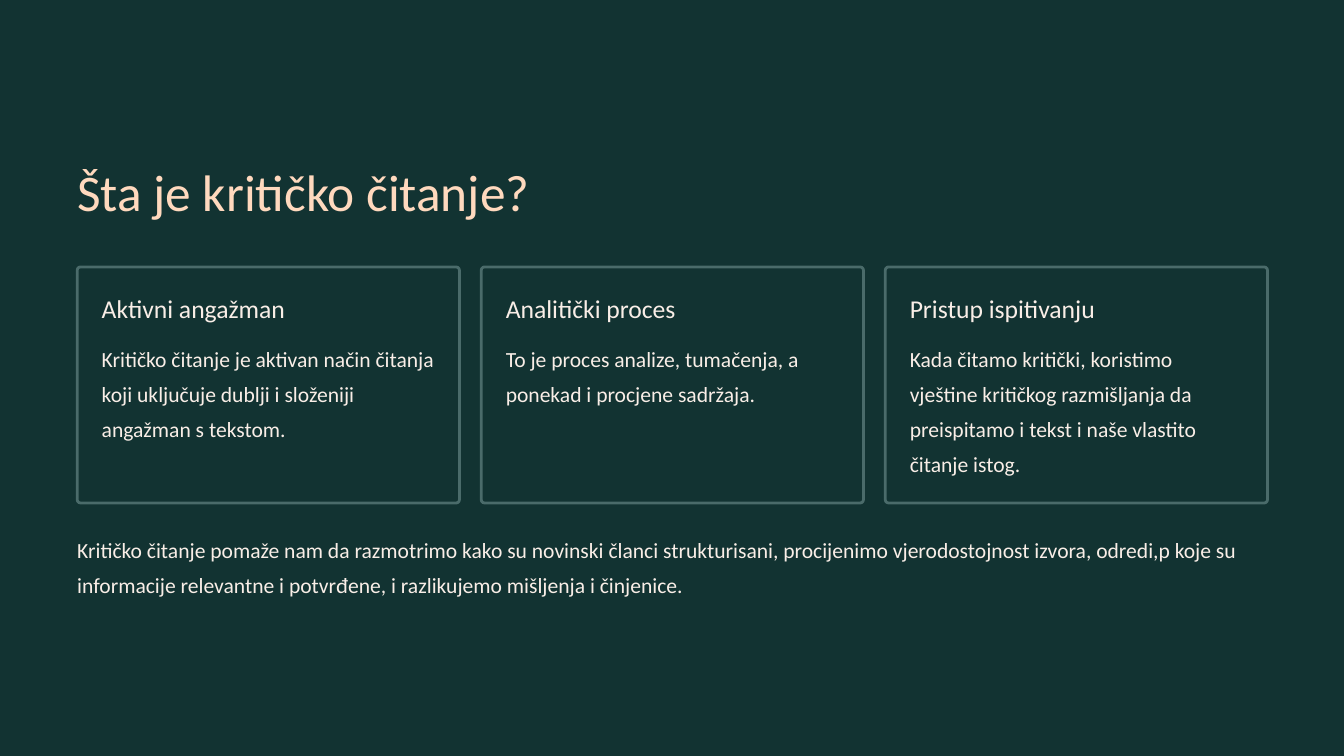
from pptx import Presentation
from pptx.dml.color import RGBColor
from pptx.enum.shapes import MSO_SHAPE as Shape
from pptx.enum.text import MSO_ANCHOR as Anchor, MSO_AUTO_SIZE as Fit, PP_ALIGN as Align
from pptx.util import Pt

GREEN = RGBColor(0x12, 0x33, 0x32)
EDGE = RGBColor(0x4A, 0x6B, 0x6A)
PEACH = RGBColor(0xFF, 0xD9, 0xBE)
CREAM = RGBColor(0xF9, 0xEE, 0xE7)

LEFT, WIDTH, GAP = 66.2, 1020.2, 18.7
CARDS = [
    ("Aktivni angažman",
     "Kritičko čitanje je aktivan način čitanja koji uključuje dublji i složeniji angažman s tekstom."),
    ("Analitički proces",
     "To je proces analize, tumačenja, a ponekad i procjene sadržaja."),
    ("Pristup ispitivanju",
     "Kada čitamo kritički, koristimo vještine kritičkog razmišljanja da preispitamo "
     "i tekst i naše vlastito čitanje istog."),
]
CLOSING = ("Kritičko čitanje pomaže nam da razmotrimo kako su novinski članci strukturisani, "
           "procijenimo vjerodostojnost izvora, odredi,p koje su informacije relevantne i "
           "potvrđene, i razlikujemo mišljenja i činjenice.")


def write(shape, text, size, lead, color=CREAM):
    """Fill a shape with one left-aligned paragraph and no insets."""
    frame = shape.text_frame
    frame.margin_left = frame.margin_right = frame.margin_top = frame.margin_bottom = 0
    frame.word_wrap = True
    frame.auto_size = Fit.NONE
    frame.vertical_anchor = Anchor.TOP
    frame.text = text
    para = frame.paragraphs[0]
    para.alignment = Align.LEFT
    para.line_spacing = Pt(lead)
    para.font.size = Pt(size)
    para.font.name = "Calibri"
    para.font.color.rgb = color


def add_text(slide, box, text, size, lead):
    """Add a text box at the given left, top, width and height."""
    write(slide.shapes.add_textbox(*map(Pt, box)), text, size, lead)


def add_title(slide, box, text):
    """Place the slide title in its box."""
    title = slide.shapes.title
    title.left, title.top, title.width, title.height = map(Pt, box)
    write(title, text, 44, 55, PEACH)


def add_card(slide, box, head, body):
    """Draw an outlined card with a heading and body text."""
    left, top, width, height = box
    card = slide.shapes.add_shape(Shape.ROUNDED_RECTANGLE, *map(Pt, box))
    card.adjustments[0] = 0.014
    card.shadow.inherit = False
    card.fill.solid()
    card.fill.fore_color.rgb = GREEN
    card.line.color.rgb = EDGE
    card.line.width = Pt(2.4)
    pad = 21
    inner = width - 2 * pad
    add_text(slide, (left + pad, top + pad, inner, 27.5), head, 22, 27.5)
    add_text(slide, (left + pad, top + 59.8, inner, height - 59.8 - pad), body, 18.5, 30)


def add_row(slide, box, cards):
    """Spread the cards evenly across the box."""
    left, top, width, height = box
    span = (width + GAP) / len(cards)
    for i, (head, body) in enumerate(cards):
        add_card(slide, (left + i * span, top, span - GAP, height), head, body)


def main():
    """Build and save the slide."""
    deck = Presentation()
    deck.slide_width, deck.slide_height = Pt(1152), Pt(648)
    slide = deck.slides.add_slide(deck.slide_layouts[5])
    slide.background.fill.solid()
    slide.background.fill.fore_color.rgb = GREEN
    add_title(slide, (LEFT, 135.4, 497.5, 55), "Šta je kritičko čitanje?")
    add_row(slide, (LEFT, 228.8, WIDTH, 202.3), CARDS)
    add_text(slide, (LEFT, 452.2, WIDTH, 60), CLOSING, 18.5, 30)
    deck.save("out.pptx")


if __name__ == "__main__":
    main()
